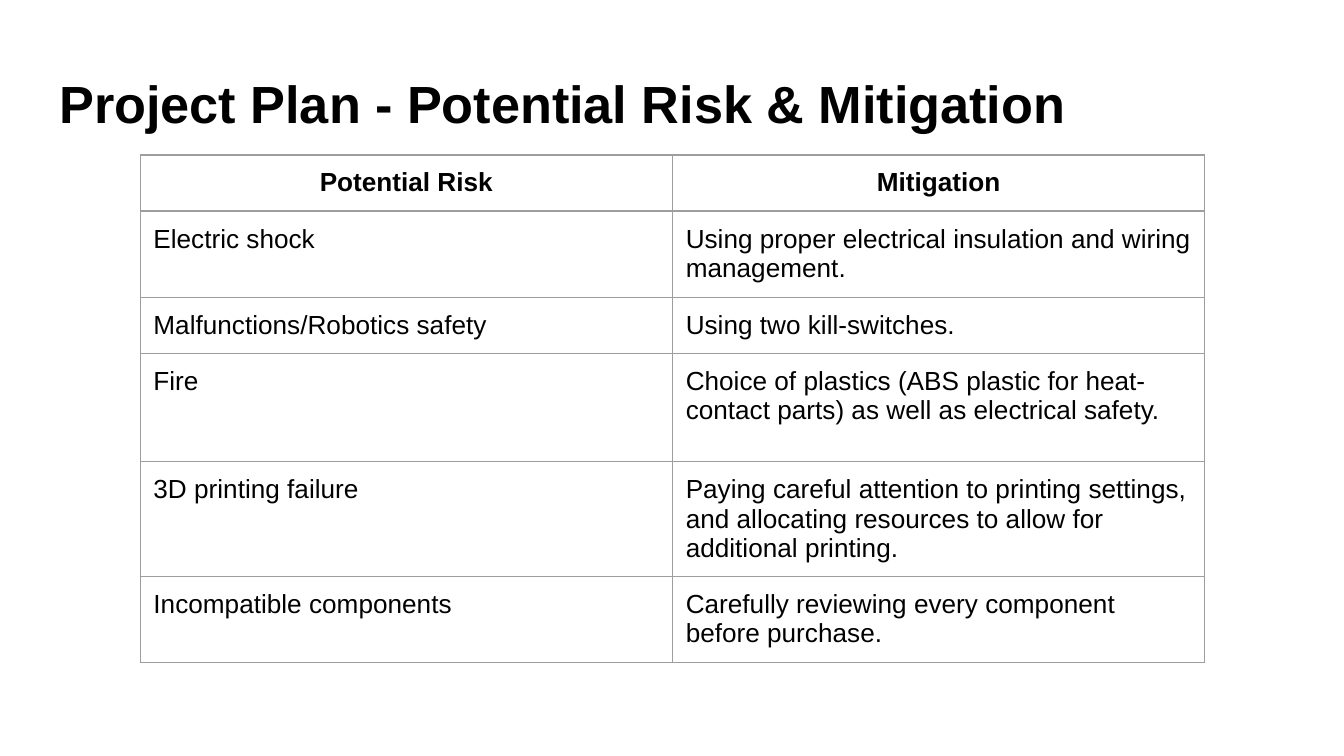
"""Build the project plan slide listing potential risks and their mitigation."""
from lxml.etree import SubElement
from pptx import Presentation
from pptx.dml.color import RGBColor
from pptx.enum.text import MSO_ANCHOR, PP_ALIGN
from pptx.oxml.ns import qn
from pptx.util import Cm, Pt

HEADING = "Project Plan - Potential Risk & Mitigation"
COLUMNS = ("Potential Risk", "Mitigation")
RISKS = [
    ("Electric shock", "Using proper electrical insulation and wiring management."),
    ("Malfunctions/Robotics safety", "Using two kill-switches."),
    ("Fire", "Choice of plastics (ABS plastic for heat-contact parts) "
             "as well as electrical safety."),
    ("3D printing failure", "Paying careful attention to printing settings, and "
                            "allocating resources to allow for additional printing."),
    ("Incompatible components", "Carefully reviewing every component before purchase."),
]
ROW_HEIGHTS = (1.06, 1.63, 1.06, 2.05, 2.17, 1.63)
COLUMN_WIDTH = 10.06
INSET = Cm(0.25)
BLACK, GREY = "000000", "9E9E9E"


def write(frame, text, size=14, bold=False, align=PP_ALIGN.LEFT, color=BLACK):
    frame.word_wrap = True
    paragraph = frame.paragraphs[0]
    paragraph.alignment = align
    run = paragraph.add_run()
    run.text = text
    run.font.name = "Arial"
    run.font.size = Pt(size)
    run.font.bold = bold
    run.font.color.rgb = RGBColor.from_string(color)


def set_insets(box):
    box.margin_left = box.margin_right = box.margin_top = box.margin_bottom = INSET
    box.vertical_anchor = MSO_ANCHOR.TOP


def draw_borders(cell, color=GREY, width=0.75):
    properties = cell._tc.get_or_add_tcPr()
    for position, side in enumerate(("lnL", "lnR", "lnT", "lnB")):
        border = properties.makeelement(qn(f"a:{side}"), {"w": str(Pt(width))})
        fill = SubElement(border, qn("a:solidFill"))
        SubElement(fill, qn("a:srgbClr"), val=color)
        properties.insert(position, border)


def main():
    presentation = Presentation()
    presentation.slide_width, presentation.slide_height = Cm(25.4), Cm(14.29)
    slide = presentation.slides.add_slide(presentation.slide_layouts[5])

    title = slide.shapes.title
    title.left, title.top, title.width, title.height = Cm(0.87), Cm(1.1), Cm(23.67), Cm(1.6)
    set_insets(title.text_frame)
    write(title.text_frame, HEADING, size=28, bold=True)

    rows = [COLUMNS, *RISKS]
    table = slide.shapes.add_table(
        len(rows), len(COLUMNS), Cm(2.65), Cm(2.93),
        Cm(COLUMN_WIDTH * len(COLUMNS)), Cm(sum(ROW_HEIGHTS))).table
    table.horz_banding = False
    for column in table.columns:
        column.width = Cm(COLUMN_WIDTH)
    for index, (texts, height) in enumerate(zip(rows, ROW_HEIGHTS)):
        table.rows[index].height = Cm(height)
        header = index == 0
        for cell, text in zip(table.rows[index].cells, texts):
            set_insets(cell)
            cell.fill.background()
            draw_borders(cell)
            write(cell.text_frame, text, bold=header,
                  align=PP_ALIGN.CENTER if header else PP_ALIGN.LEFT)

    presentation.save("out.pptx")


if __name__ == "__main__":
    main()
